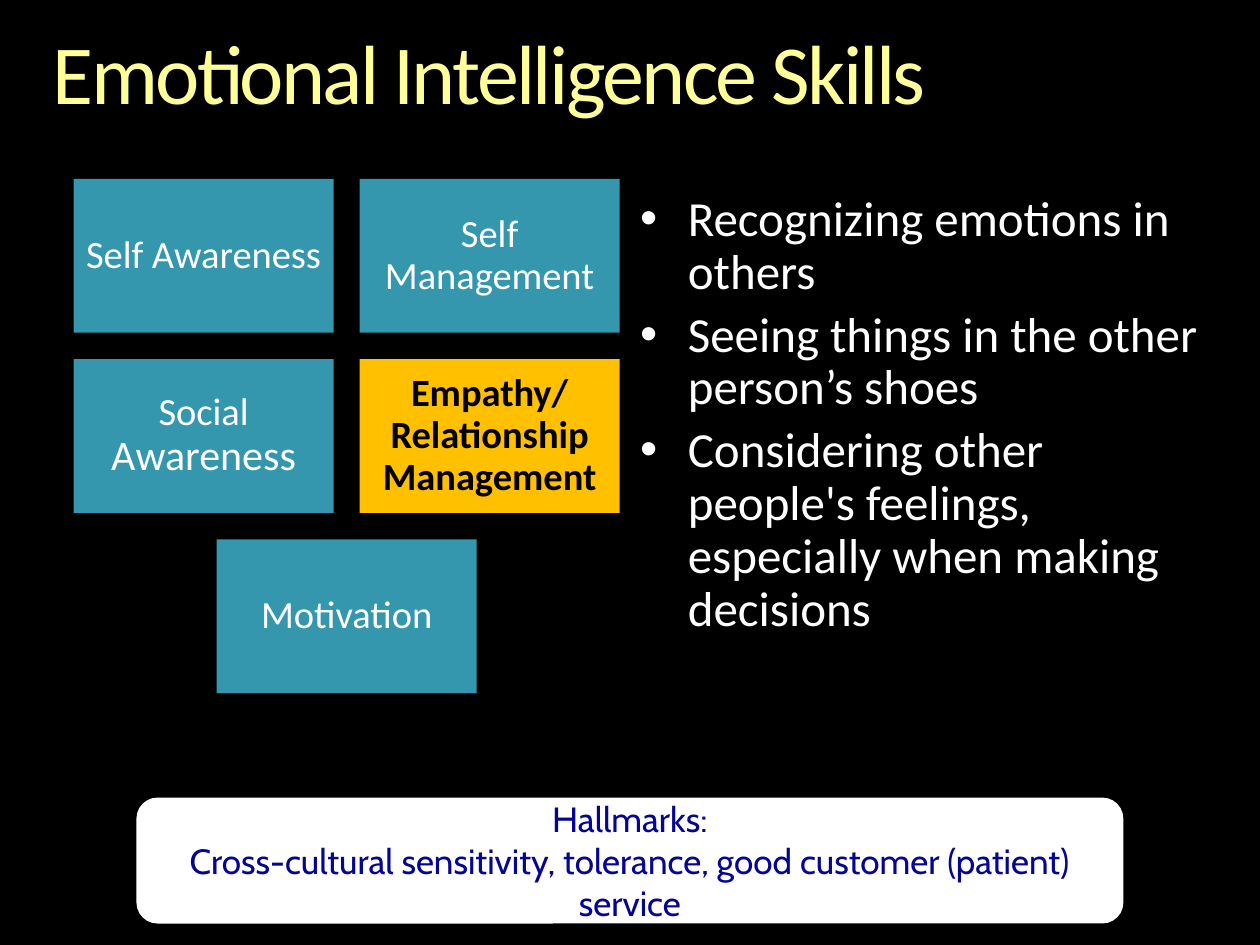
import pptx
import pptx.util
import pptx.dml.color
import pptx.enum.shapes
import pptx.enum.text
import pptx.oxml.ns
import lxml.etree

COLORS = {
    "background": "000000",
    "title": "FFFF99",
    "light": "FFFFFF",
    "dark": "000000",
    "skill": "3497AE",
    "focus": "FFC000",
    "hallmark": "050595",
}
ALIGN = pptx.enum.text.PP_ALIGN
ANCHOR = pptx.enum.text.MSO_ANCHOR
SHAPES = pptx.enum.shapes.MSO_SHAPE


def rgb(name):
    return pptx.dml.color.RGBColor.from_string(COLORS[name])


def add_bullet(paragraph, indent):
    properties = paragraph._p.get_or_add_pPr()
    properties.set("marL", str(indent))
    properties.set("indent", str(-indent))
    bullet = lxml.etree.SubElement(properties, pptx.oxml.ns.qn("a:buChar"))
    bullet.set("char", "•")


def write(frame, paragraphs, *, size, color, font="Calibri", bold=False,
          align=ALIGN.LEFT, anchor=ANCHOR.TOP, margins=(0, 0), line=0.9,
          gap=0, indent=None, tracking=None):
    frame.word_wrap = True
    frame.auto_size = pptx.enum.text.MSO_AUTO_SIZE.NONE
    frame.vertical_anchor = anchor
    frame.margin_left = frame.margin_right = pptx.util.Inches(margins[0])
    frame.margin_top = frame.margin_bottom = pptx.util.Inches(margins[1])
    for index, runs in enumerate(paragraphs):
        paragraph = frame.add_paragraph() if index else frame.paragraphs[0]
        if indent:
            add_bullet(paragraph, pptx.util.Inches(indent))
        paragraph.alignment = align
        paragraph.line_spacing = line
        paragraph.space_before = pptx.util.Pt(gap if index else 0)
        for words, run_size in [(runs, size)] if isinstance(runs, str) else runs:
            run = paragraph.add_run()
            run.text = words
            run.font.name = font
            run.font.size = pptx.util.Pt(run_size)
            run.font.bold = bold
            run.font.color.rgb = rgb(color)
            if tracking:
                run._r.get_or_add_rPr().set("spc", str(round(tracking * 100)))


class SkillsSlide:
    def __init__(self, deck):
        self.width, self.height = deck.slide_width, deck.slide_height
        self.slide = deck.slides.add_slide(deck.slide_layouts[1])
        self.slide.background.fill.solid()
        self.slide.background.fill.fore_color.rgb = rgb("background")

    def area(self, left, top, width, height):
        return [round(share * side / 100) for share, side in
                zip((left, top, width, height), (self.width, self.height) * 2)]

    def fill_placeholder(self, holder, area, paragraphs, **style):
        holder.left, holder.top, holder.width, holder.height = self.area(*area)
        write(holder.text_frame, paragraphs, **style)

    def title(self, area, words):
        self.fill_placeholder(self.slide.shapes.title, area, [words],
                              size=48, color="title", tracking=-1.5)

    def bullets(self, area, items):
        self.fill_placeholder(self.slide.placeholders[1], area, items,
                              size=28, color="light", gap=5.6, indent=0.38)

    def box(self, kind, area, fill, paragraphs, **style):
        shape = self.slide.shapes.add_shape(kind, *self.area(*area))
        shape.shadow.inherit = False
        shape.fill.solid()
        shape.fill.fore_color.rgb = rgb(fill)
        shape.line.fill.background()
        write(shape.text_frame, paragraphs, align=ALIGN.CENTER,
              anchor=ANCHOR.MIDDLE, **style)

    def skill(self, column, row, words, focus=False):
        area = (5.84 + 22.7 * column, 18.93 + 19.07 * row, 20.64, 16.27)
        self.box(SHAPES.RECTANGLE, area, "focus" if focus else "skill", [words],
                 size=22, color="dark" if focus else "light", bold=focus,
                 margins=(0.09, 0.09))

    def hallmarks(self, area, lines):
        self.box(SHAPES.ROUNDED_RECTANGLE, area, "light", lines, size=20,
                 color="hallmark", font="Cabin", margins=(0.1, 0.05), line=1.0)


def main():
    deck = pptx.Presentation()
    deck.slide_width = pptx.util.Inches(10)
    deck.slide_height = pptx.util.Inches(7.5)
    skills = SkillsSlide(deck)
    skills.title((4.2, 3.33, 91.7, 9.73), "Emotional Intelligence Skills")
    skills.bullets((50.8, 20.53, 45, 54.67), [
        "Recognizing emotions in others",
        "Seeing things in the other person’s shoes",
        "Considering other people's feelings, especially when making decisions",
    ])
    skills.skill(0, 0, "Self Awareness")
    skills.skill(1, 0, "Self Management")
    skills.skill(0, 1, [("Social ", 22), ("Awareness", 24)])
    skills.skill(1, 1, "Empathy/Relationship Management", focus=True)
    skills.skill(0.5, 2, "Motivation")
    skills.hallmarks((10.83, 84.4, 78.33, 13.33), [
        "Hallmarks:",
        "Cross-cultural sensitivity, tolerance, good customer (patient) service",
    ])
    deck.save("out.pptx")


if __name__ == "__main__":
    main()
